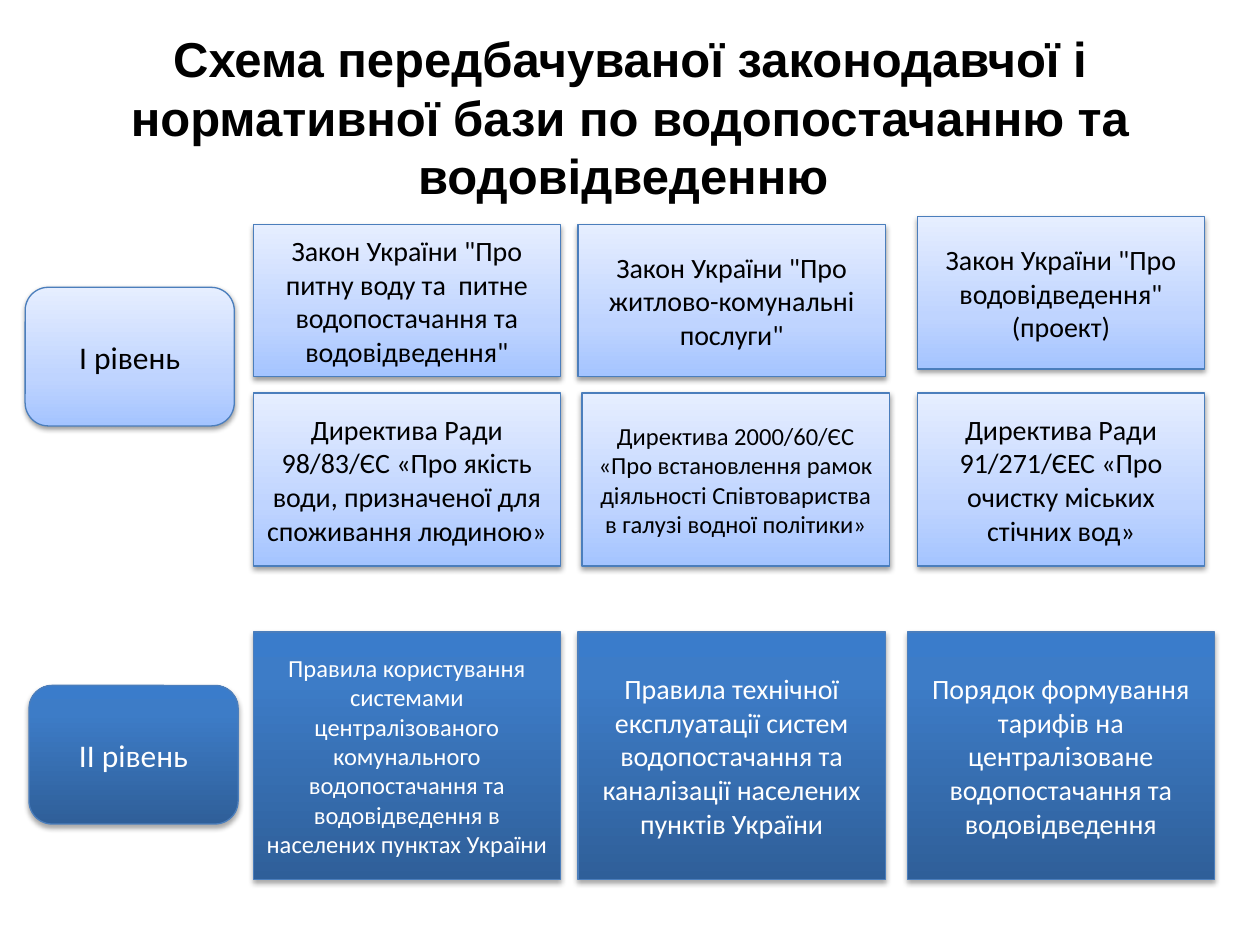
from dataclasses import dataclass

from lxml.etree import SubElement
from pptx import Presentation
from pptx.dml.color import RGBColor
from pptx.enum.shapes import MSO_SHAPE as Shape
from pptx.enum.text import MSO_ANCHOR as Anchor, PP_ALIGN as Align
from pptx.oxml.ns import qn
from pptx.util import Pt

COLORS = {
    "black": "000000", "white": "FFFFFF", "outline": "4B7EBC",
    "pale_low": "A4C4FF", "pale_mid": "BFD4FF", "pale_high": "E6EEFF",
    "deep_low": "2F5F99", "deep_mid": "3D7CC7", "deep_high": "3A7CCB",
}


@dataclass(frozen=True)
class Style:
    stops: tuple[tuple[int, str], ...]  # percent from the bottom, colour name
    text_color: str
    shadow_opacity: int
    shadow_distance: float


@dataclass(frozen=True)
class Card:
    text: str
    left: float
    width: float = 175.7
    size: int = 16


@dataclass(frozen=True)
class Row:
    top: float
    height: float
    style: Style
    cards: tuple[Card, ...]
    kind: Shape = Shape.RECTANGLE


PALE = Style(((0, "pale_low"), (35, "pale_mid"), (100, "pale_high")), "black", 38, 1.6)
DEEP = Style(((0, "deep_low"), (80, "deep_mid"), (100, "deep_high")), "white", 35, 1.8)

COLUMN_1, COLUMN_2, COLUMN_3 = 144.7, 330.3, 524.2
NARROW = 164.2

TITLE = "Схема передбачуваної законодавчої і нормативної бази по водопостачанню та водовідведенню "
ROWS = (
    Row(164.2, 79.2, PALE, (Card("I рівень", 14.4, 119.5, 18),), Shape.ROUNDED_RECTANGLE),
    Row(128.2, 87.1, PALE, (
        Card('Закон України "Про питну воду та  питне водопостачання та водовідведення"', COLUMN_1),
        Card('Закон України "Про житлово-комунальні послуги"', COLUMN_2),
    )),
    Row(123.8, 87.1, PALE, (
        Card('Закон України "Про водовідведення" (проект)', COLUMN_3, NARROW),
    )),
    Row(224.6, 98.8, PALE, (
        Card("Директива Ради 98/83/ЄС «Про якість води, призначеної для споживання людиною»", COLUMN_1),
        Card("Директива 2000/60/ЄС «Про встановлення рамок діяльності Співтовариства "
             "в галузі водної політики»", 332.6, size=14),
        Card("Директива Ради 91/271/ЄЕС «Про очистку міських стічних вод»", COLUMN_3, NARROW),
    )),
    Row(391.7, 79.2, DEEP, (Card("II рівень", 16.6, 119.5, 18),), Shape.ROUNDED_RECTANGLE),
    Row(361.1, 141.5, DEEP, (
        Card("Правила користування системами централізованого комунального водопостачання "
             "та водовідведення в населених пунктах України", COLUMN_1, size=14),
        Card("Правила технічної експлуатації систем водопостачання та каналізації "
             "населених пунктів України", COLUMN_2),
        Card("Порядок формування тарифів на централізоване водопостачання та водовідведення", 518.4),
    )),
)


def color(name: str) -> RGBColor:
    return RGBColor.from_string(COLORS[name])


def write_text(shape, text: str, font_name: str, size: int, color_name: str, bold: bool = False) -> None:
    frame = shape.text_frame
    frame.word_wrap = True
    frame.vertical_anchor = Anchor.MIDDLE
    para = frame.paragraphs[0]
    para.text = text
    para.alignment = Align.CENTER
    font = para.font
    font.name, font.size, font.bold = font_name, Pt(size), bold
    font.color.rgb = color(color_name)


def fill_gradient(box, style: Style) -> None:
    """Fill the box from bottom to top with any number of stops."""
    box.fill.gradient()
    box.fill.gradient_angle = 90
    stop_list = box._element.spPr.find(".//" + qn("a:gsLst"))
    for stop in list(stop_list):
        stop_list.remove(stop)
    for percent, name in style.stops:
        stop = SubElement(stop_list, qn("a:gs"), pos=str(percent * 1000))
        SubElement(stop, qn("a:srgbClr"), val=COLORS[name])


def cast_shadow(box, style: Style) -> None:
    box.shadow.inherit = False
    effects = box._element.spPr.find(qn("a:effectLst"))
    shadow = SubElement(
        effects, qn("a:outerShdw"), blurRad=str(Pt(3.1)),
        dist=str(Pt(style.shadow_distance)), dir="5400000", rotWithShape="0")
    tint = SubElement(shadow, qn("a:srgbClr"), val=COLORS["black"])
    SubElement(tint, qn("a:alpha"), val=str(style.shadow_opacity * 1000))


def draw_row(page, row: Row) -> None:
    for card in row.cards:
        box = page.shapes.add_shape(
            row.kind, Pt(card.left), Pt(row.top), Pt(card.width), Pt(row.height))
        fill_gradient(box, row.style)
        box.line.color.rgb = color("outline")
        box.line.width = Pt(0.75)
        cast_shadow(box, row.style)
        write_text(box, card.text, "Calibri", card.size, row.style.text_color)


def main() -> None:
    deck = Presentation()
    deck.slide_width, deck.slide_height = Pt(720), Pt(540)
    page = deck.slides.add_slide(deck.slide_layouts[5])
    title = page.shapes.title
    title.left, title.top, title.width, title.height = Pt(36), Pt(21.6), Pt(648), Pt(90)
    write_text(title, TITLE, "Arial", 28, "black", bold=True)
    for row in ROWS:
        draw_row(page, row)
    deck.save("out.pptx")


if __name__ == "__main__":
    main()
